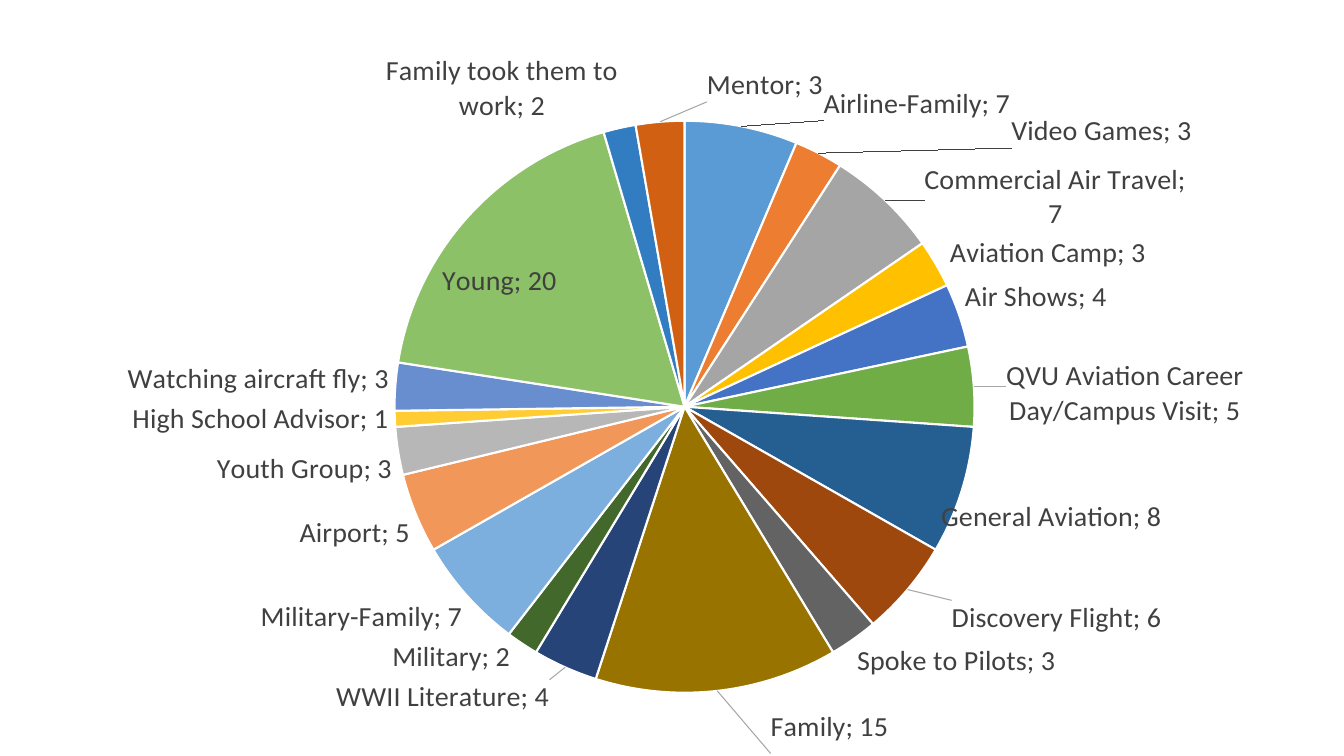
from lxml.etree import SubElement
from pptx import Presentation
from pptx.chart.data import CategoryChartData
from pptx.dml.color import RGBColor
from pptx.enum.chart import XL_CHART_TYPE, XL_LABEL_POSITION
from pptx.oxml.ns import qn
from pptx.util import Cm, Pt

INFLUENCES = [
    ("Airline-Family", 7, "5B9BD5"),
    ("Video Games", 3, "ED7D31"),
    ("Commercial Air Travel", 7, "A5A5A5"),
    ("Aviation Camp", 3, "FFC000"),
    ("Air Shows", 4, "4472C4"),
    ("QVU Aviation Career Day/Campus Visit", 5, "70AD47"),
    ("General Aviation", 8, "255E91"),
    ("Discovery Flight", 6, "9E480E"),
    ("Spoke to Pilots", 3, "636363"),
    ("Family", 15, "997300"),
    ("WWII Literature", 4, "264478"),
    ("Military", 2, "43682B"),
    ("Military-Family", 7, "7CAFDD"),
    ("Airport", 5, "F1975A"),
    ("Youth Group", 3, "B7B7B7"),
    ("High School Advisor", 1, "FFCD33"),
    ("Watching aircraft fly", 3, "698ED0"),
    ("Young", 20, "8CC168"),
    ("Family took them to work", 2, "327DC2"),
    ("Mentor", 3, "D26012"),
]
LABEL_SHIFTS = {
    "QVU Aviation Career Day/Campus Visit": (0.02, 0.01),
    "General Aviation": (-0.02, 0.01),
    "Discovery Flight": (0.03, 0.01),
    "Family": (0.04, 0.08),
    "WWII Literature": (-0.01, 0.01),
    "Mentor": (0.08, -0.02),
}
THEME = {
    "font": "Calibri",
    "size": Pt(20),
    "text": "404040",
    "edge": "FFFFFF",
    "edge_width": Pt(1.5),
    "leader": "A6A6A6",
    "leader_width": Pt(0.75),
}
CHART_BOX = {"x": Cm(0.31), "y": Cm(0.86), "cx": Cm(33.22), "cy": Cm(18.14)}
PIE_AREA = {"x": 0.29, "y": 0.12, "w": 0.44, "h": 0.81}


def set_values(target, values):
    for name, value in values.items():
        setattr(target, name, value)


def add_layout(parent, values):
    manual = SubElement(parent, qn("c:manualLayout"))
    for name, value in values.items():
        SubElement(manual, qn(f"c:{name}")).set("val", str(value))


def style_label(label, element):
    set_values(label.font, {"name": THEME["font"], "size": THEME["size"]})
    label.font.color.rgb = RGBColor.from_string(THEME["text"])
    label.position = XL_LABEL_POSITION.BEST_FIT
    element.find(".//" + qn("a:bodyPr")).set("wrap", "square")


def shift_label(point, index, shift):
    label = point.data_label
    label.position = XL_LABEL_POSITION.BEST_FIT
    element = next(
        item for item in series.data_labels._element.findall(qn("c:dLbl"))
        if item.find(qn("c:idx")).get("val") == str(index)
    )
    style_label(label, element)
    element.find(qn("c:showCatName")).set("val", "1")
    layout = SubElement(element, qn("c:layout"))
    element.insert(1, layout)
    add_layout(layout, dict(zip("xy", shift)))


presentation = Presentation()
set_values(presentation, {"slide_width": Cm(33.87), "slide_height": Cm(19.05)})
slide = presentation.slides.add_slide(presentation.slide_layouts[6])

data = CategoryChartData()
data.categories = [name for name, count, color in INFLUENCES]
data.add_series("Series 1", [count for name, count, color in INFLUENCES])
chart = slide.shapes.add_chart(XL_CHART_TYPE.PIE, chart_data=data, **CHART_BOX).chart
set_values(chart, {"has_legend": False, "has_title": False})
set_values(chart.font, {"name": THEME["font"], "size": THEME["size"]})

plot = chart.plots[0]
plot.vary_by_categories = True
series = plot.series[0]
labels = series.data_labels
set_values(labels, {"show_category_name": True, "show_value": True, "show_percentage": False})
style_label(labels, labels._element)

for old in labels._element.findall(qn("c:showLeaderLines")):
    labels._element.remove(old)
SubElement(labels._element, qn("c:showLeaderLines")).set("val", "1")
leader = SubElement(SubElement(labels._element, qn("c:leaderLines")), qn("c:spPr"))
line = SubElement(leader, qn("a:ln"), w=str(int(THEME["leader_width"])))
SubElement(SubElement(line, qn("a:solidFill")), qn("a:srgbClr")).set("val", THEME["leader"])

for index, (name, count, color) in enumerate(INFLUENCES):
    point = series.points[index]
    point.format.fill.solid()
    point.format.fill.fore_color.rgb = RGBColor.from_string(color)
    point.format.line.color.rgb = RGBColor.from_string(THEME["edge"])
    point.format.line.width = THEME["edge_width"]
    if name in LABEL_SHIFTS:
        shift_label(point, index, LABEL_SHIFTS[name])

plot_area = chart.element.find(".//" + qn("c:plotArea"))
layout = plot_area.find(qn("c:layout"))
if layout is None:
    layout = SubElement(plot_area, qn("c:layout"))
    plot_area.insert(0, layout)
add_layout(layout, {"layoutTarget": "inner", "xMode": "edge", "yMode": "edge", **PIE_AREA})

presentation.save("out.pptx")
